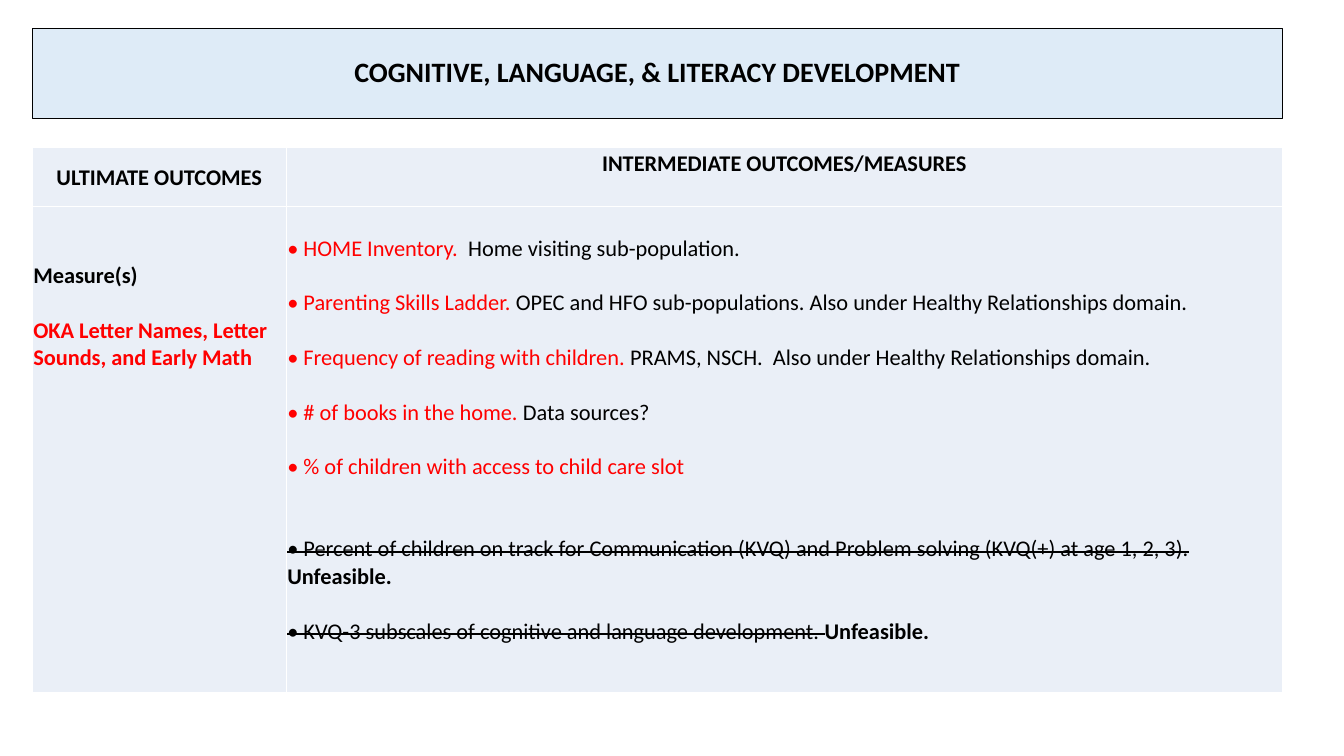
"""Builds the slide on cognitive, language and literacy outcomes."""
from pptx import Presentation
from pptx.dml.color import RGBColor
from pptx.enum.text import MSO_ANCHOR, PP_ALIGN
from pptx.util import Inches, Pt

BLACK = RGBColor(0x00, 0x00, 0x00)
RED = RGBColor(0xFF, 0x00, 0x00)
TITLE_FILL = RGBColor(0xDE, 0xEB, 0xF7)
CELL_FILL = RGBColor(0xEA, 0xEF, 0xF7)

FONT = "Calibri"
BODY_SIZE = 16
LINE = 19.5
LINE_IN = LINE / 72

PLAIN = (BLACK, False, False)
BOLD = (BLACK, True, False)
KEY = (RED, False, False)
KEY_BOLD = (RED, True, False)
STRUCK = (BLACK, False, True)

TITLE = "COGNITIVE, LANGUAGE, & LITERACY DEVELOPMENT"
HEADERS = [
    ("ULTIMATE OUTCOMES", MSO_ANCHOR.MIDDLE, 0.01),
    ("INTERMEDIATE OUTCOMES/MEASURES", MSO_ANCHOR.TOP, 0.03),
]
ULTIMATE = [
    [("Measure(s)", BOLD)],
    [("OKA Letter Names, Letter Sounds, and Early Math", KEY_BOLD)],
]
CURRENT = [
    [("• HOME Inventory.  ", KEY), ("Home visiting sub-population.", PLAIN)],
    [("• Parenting Skills Ladder. ", KEY),
     ("OPEC and HFO sub-populations. Also under Healthy Relationships domain.", PLAIN)],
    [("• Frequency of reading with children. ", KEY),
     ("PRAMS, NSCH.  Also under Healthy Relationships domain.", PLAIN)],
    [("• # of books in the home. ", KEY), ("Data sources?", PLAIN)],
    [("• % of children with access to child care slot", KEY)],
]
DROPPED = [
    [("• Percent of children on track for Communication (KVQ) and Problem solving "
      "(KVQ(+) at age 1, 2, 3). ", STRUCK), ("Unfeasible.", BOLD)],
    [("• KVQ-3 subscales of cognitive and language development. ", STRUCK),
     ("Unfeasible.", BOLD)],
]

LEFT, TITLE_TOP, TITLE_H = 0.32, 0.28, 0.9
TABLE_TOP = 1.46
COLS = (2.52, 9.88)
ROWS = (0.59, 4.82)
WIDTH = sum(COLS)


def add_run(p, text, style, size=BODY_SIZE):
    color, bold, struck = style
    r = p.add_run()
    r.text = text
    r.font.name, r.font.size, r.font.bold = FONT, Pt(size), bold
    r.font.color.rgb = color
    if struck:
        r.font._element.set("strike", "sngStrike")


def fill_cell(cell, paragraphs, top, anchor=MSO_ANCHOR.TOP, align=PP_ALIGN.LEFT):
    cell.fill.solid()
    cell.fill.fore_color.rgb = CELL_FILL
    cell.vertical_anchor = anchor
    cell.margin_left = cell.margin_right = Inches(0.01)
    cell.margin_top, cell.margin_bottom = Inches(top), 0
    tf = cell.text_frame
    for i, runs in enumerate(paragraphs):
        p = tf.paragraphs[0] if i == 0 else tf.add_paragraph()
        p.alignment = align
        if i:
            p.space_before = Pt(LINE * (2 if runs is DROPPED[0] else 1))
        for text, style in runs:
            add_run(p, text, style)


def add_title(slide):
    sp = slide.shapes.title
    sp.left, sp.top = Inches(LEFT), Inches(TITLE_TOP)
    sp.width, sp.height = Inches(WIDTH), Inches(TITLE_H)
    sp.fill.solid()
    sp.fill.fore_color.rgb = TITLE_FILL
    sp.line.color.rgb = BLACK
    sp.line.width = Pt(0.75)
    tf = sp.text_frame
    tf.vertical_anchor = MSO_ANCHOR.MIDDLE
    p = tf.paragraphs[0]
    p.alignment, p.line_spacing = PP_ALIGN.CENTER, 0.9
    add_run(p, TITLE, BOLD, 20)


def add_outcomes(slide):
    frame = slide.shapes.add_table(len(ROWS), len(COLS), Inches(LEFT), Inches(TABLE_TOP),
                                   Inches(WIDTH), Inches(sum(ROWS)))
    table = frame.table
    table.first_row = table.horz_banding = False
    for col, width in zip(table.columns, COLS):
        col.width = Inches(width)
    for row, height in zip(table.rows, ROWS):
        row.height = Inches(height)
    for c, (text, anchor, top) in enumerate(HEADERS):
        fill_cell(table.cell(0, c), [[(text, BOLD)]], top, anchor, PP_ALIGN.CENTER)
    fill_cell(table.cell(1, 0), ULTIMATE, 0.01 + 2 * LINE_IN)
    fill_cell(table.cell(1, 1), CURRENT + DROPPED, 0.01 + LINE_IN)


def main():
    prs = Presentation()
    prs.slide_width, prs.slide_height = Inches(13.33), Inches(7.5)
    slide = prs.slides.add_slide(prs.slide_layouts[5])
    add_title(slide)
    add_outcomes(slide)
    prs.save("out.pptx")


if __name__ == "__main__":
    main()
